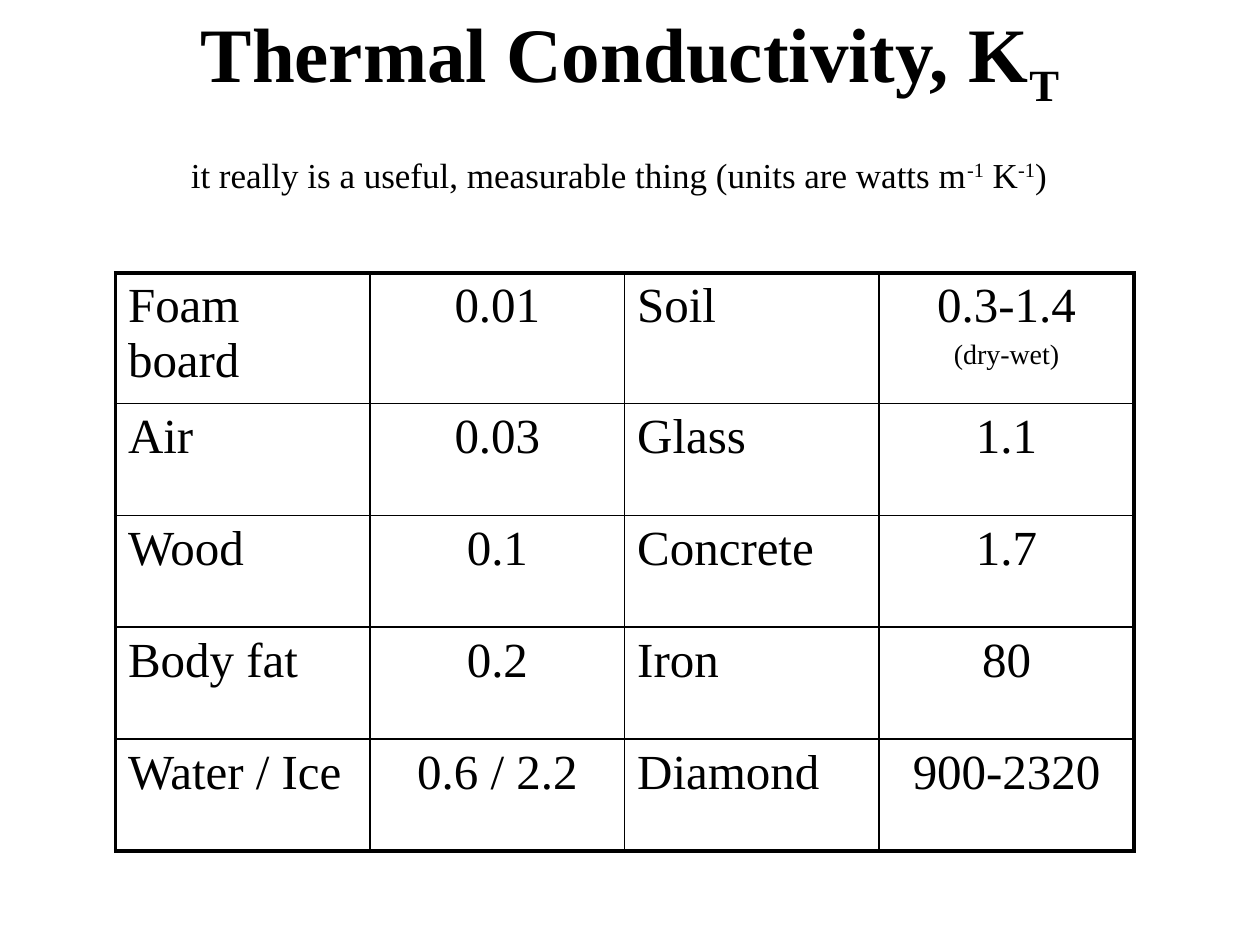
from dataclasses import dataclass

from lxml import etree
from pptx import Presentation
from pptx.dml.color import RGBColor
from pptx.enum.text import MSO_ANCHOR, PP_ALIGN
from pptx.oxml.ns import qn
from pptx.util import Pt

LEFT, CENTER = PP_ALIGN.LEFT, PP_ALIGN.CENTER
MIDDLE = MSO_ANCHOR.MIDDLE


@dataclass(frozen=True)
class Theme:
    font: str = "Times New Roman"
    ink: str = "000000"
    title: float = 44
    subtitle: float = 20
    body: float = 28
    note: float = 16
    outer_line: float = 2.25
    inner_line: float = 1


theme = Theme()


def write_paragraph(paragraph, runs, size, alignment=LEFT, bold=False):
    """Fill a paragraph from (text, baseline percent) pairs."""
    paragraph.alignment = alignment
    paragraph.font.name = theme.font
    paragraph.font.size = Pt(size)
    paragraph.font.bold = bold
    paragraph.font.color.rgb = RGBColor.from_string(theme.ink)
    for text, baseline in runs:
        run = paragraph.add_run()
        run.text = text
        if baseline:
            run.font._element.set("baseline", str(baseline * 1000))


def set_border(cell, side, width):
    line = etree.SubElement(cell._tc.get_or_add_tcPr(), qn(f"a:ln{side}"), w=str(Pt(width)))
    fill = etree.SubElement(line, qn("a:solidFill"))
    etree.SubElement(fill, qn("a:srgbClr"), val=theme.ink)


presentation = Presentation()
presentation.slide_width, presentation.slide_height = Pt(720), Pt(540)
slide = presentation.slides.add_slide(presentation.slide_layouts[6])

# Title
title = slide.shapes.add_textbox(Pt(54), Pt(0), Pt(612), Pt(66)).text_frame
title.word_wrap = True
title.vertical_anchor = MIDDLE
write_paragraph(title.paragraphs[0], [("Thermal Conductivity, K", 0), ("T", -25)],
                theme.title, CENTER, bold=True)

# Subtitle with units
subtitle = slide.shapes.add_textbox(Pt(102), Pt(84), Pt(509), Pt(31.5)).text_frame
subtitle.word_wrap = False
write_paragraph(
    subtitle.paragraphs[0],
    [("it really is a useful, measurable thing (units are watts m", 0),
     ("-1", 30), (" K", 0), ("-1", 30), (")", 0)],
    theme.subtitle)

# Conductivity table: material and value, twice per row
rows = [
    ("Foam board", "0.01", "Soil", "0.3-1.4"),
    ("Air", "0.03", "Glass", "1.1"),
    ("Wood", "0.1", "Concrete", "1.7"),
    ("Body fat", "0.2", "Iron", "80"),
    ("Water / Ice", "0.6 / 2.2", "Diamond", "900-2320"),
]
last_row, last_column = len(rows) - 1, len(rows[0]) - 1
table = slide.shapes.add_table(len(rows), len(rows[0]), Pt(66), Pt(156),
                               Pt(582), Pt(320)).table
table.first_row = table.horz_banding = False

for row_index, row in enumerate(rows):
    for column_index, text in enumerate(row):
        cell = table.cell(row_index, column_index)
        alignment = CENTER if column_index % 2 else LEFT
        write_paragraph(cell.text_frame.paragraphs[0], [(text, 0)], theme.body, alignment)
        outer_sides = {
            "L": column_index == 0,
            "R": column_index == last_column,
            "T": row_index == 0,
            "B": row_index == last_row,
        }
        for side, is_outer in outer_sides.items():
            set_border(cell, side, theme.outer_line if is_outer else theme.inner_line)
        cell.fill.background()

# Range note under the soil value
note = table.cell(0, last_column).text_frame.add_paragraph()
note.space_before = Pt(3.2)
write_paragraph(note, [("(dry-wet)", 0)], theme.note, CENTER)

presentation.save("out.pptx")
